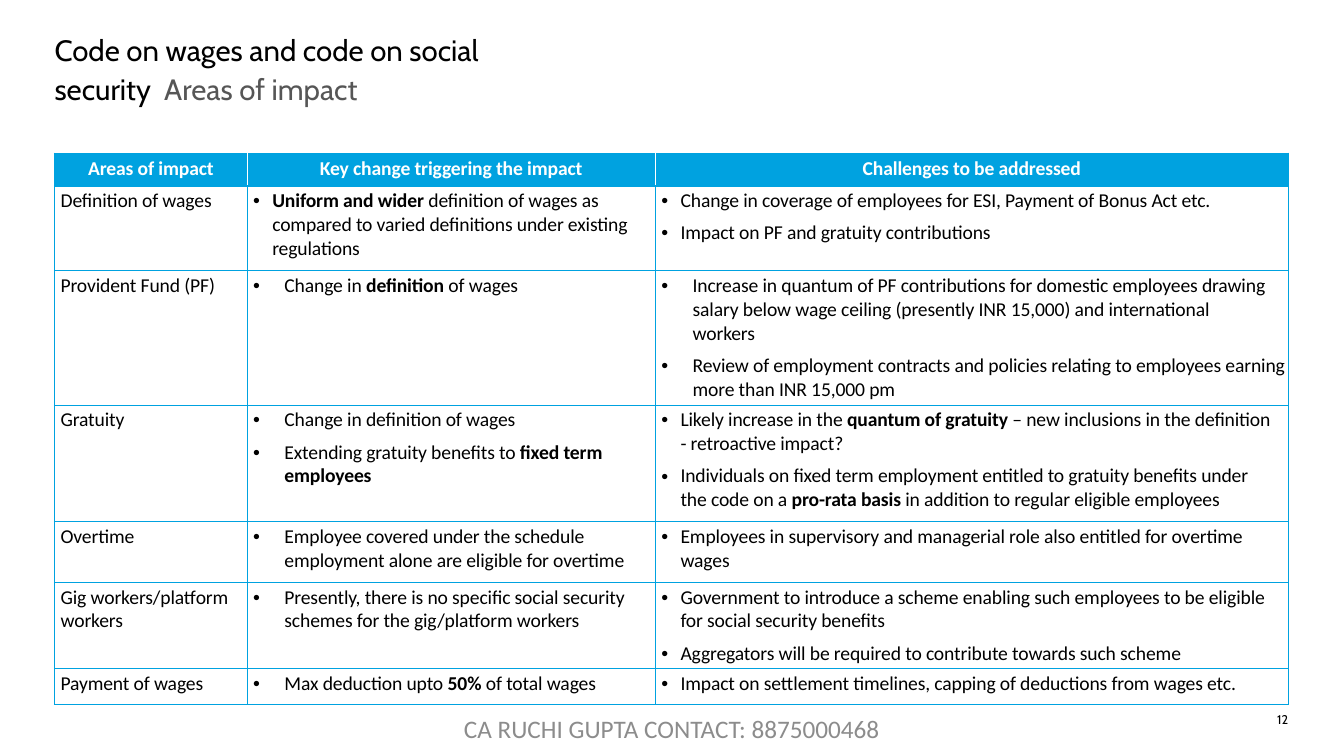
from pptx import Presentation
from pptx.dml.color import RGBColor
from pptx.enum.text import PP_ALIGN
from pptx.oxml.ns import qn
from pptx.util import Inches, Pt
from lxml import etree

LEFT, MID = PP_ALIGN.LEFT, PP_ALIGN.CENTER
COLS, ROWS = 160, 90          # grid of the slide
NEAR, FAR = (0.25, 0.19), (0.37, 0.31)   # bullet text and hang, inches
PLAIN = (0.06, 0)

HEADS = ["Areas of impact", "Key change triggering the impact",
         "Challenges to be addressed"]
WIDTHS = [22.92, 48.6, 75.36]
# Height, area, changes, challenges; *bold*, | breaks a line
AREAS = [
    (10.1, "Definition of wages",
     (NEAR, ["*Uniform and wider* definition of wages as compared to varied "
             "definitions under existing regulations"]),
     (NEAR, ["Change in coverage of employees for ESI, Payment of Bonus Act etc.",
             "Impact on PF and gratuity contributions"])),
    (16, "Provident Fund (PF)",
     (FAR, ["Change in *definition* of wages"]),
     (FAR, ["Increase in quantum of PF contributions for domestic employees "
            "drawing salary below wage ceiling (presently INR 15,000) and "
            "international|workers",
            "Review of employment contracts and policies relating to employees "
            "earning more than INR 15,000 pm"])),
    (13.9, "Gratuity",
     (FAR, ["Change in definition of wages",
            "Extending gratuity benefits to *fixed term employees*"]),
     (NEAR, ["Likely increase in the *quantum of gratuity* – new inclusions in "
             "the definition",
             "- retroactive impact?",
             "Individuals on fixed term employment entitled to gratuity "
             "benefits under|the code on a *pro-rata basis* in addition to "
             "regular eligible employees"])),
    (7.2, "Overtime",
     (FAR, ["Employee covered under the schedule employment alone are "
            "eligible for overtime"]),
     (NEAR, ["Employees in supervisory and managerial role also entitled for "
             "overtime wages"])),
    (10.3, "Gig workers/platform workers",
     (FAR, ["Presently, there is no specific social security schemes for the "
            "gig/platform workers"]),
     (NEAR, ["Government to introduce a scheme enabling such employees to be "
             "eligible for social security benefits",
             "Aggregators will be required to contribute towards such scheme"])),
    (4.2, "Payment of wages",
     (FAR, ["Max deduction upto *50%* of total wages"]),
     (NEAR, ["Impact on settlement timelines, capping of deductions from "
             "wages etc."])),
]


def tint(code):
    return RGBColor.from_string(code)


class Page:
    blue, white, black = "00A2E0", "FFFFFF", "000000"
    head, body = "Cabin", "Calibri"

    def __init__(self, deck):
        self.wide = deck.slide_width / COLS
        self.high = deck.slide_height / ROWS
        self.slide = deck.slides.add_slide(deck.slide_layouts[6])

    def area(self, x, y, w, h):
        return (round(x * self.wide), round(y * self.high),
                round(w * self.wide), round(h * self.high))

    def style(self, run, size, face, color, bold=False):
        font = run.font
        font.size, font.name, font.bold = Pt(size), face, bold
        font.color.rgb = tint(color)

    def label(self, place, parts, size, face, align=LEFT, pitch=None):
        """Text box of one paragraph, from (text, colour) parts."""
        frame = self.slide.shapes.add_textbox(*self.area(*place)).text_frame
        frame.word_wrap = True
        frame.margin_left = frame.margin_right = 0
        frame.margin_top = frame.margin_bottom = 0
        para = frame.paragraphs[0]
        para.alignment, para.line_spacing = align, pitch
        for text, color in parts:
            run = para.add_run()
            run.text = text
            self.style(run, size, face, color)

    def edge(self, cell, sides):
        """Cell borders, given as side and colour."""
        props = cell._tc.get_or_add_tcPr()
        for side, color in sides.items():
            line = etree.SubElement(props, qn("a:ln" + side), w=str(Pt(1)))
            fill = etree.SubElement(line, qn("a:solidFill"))
            etree.SubElement(fill, qn("a:srgbClr"), val=color)

    def words(self, para, text, color, bold=False):
        for row, line in enumerate(text.split("|")):
            if row:
                para.add_line_break()
            for i, part in enumerate(line.split("*")):
                if part:
                    run = para.add_run()
                    run.text = part
                    self.style(run, 14, self.body, color, bold or i % 2 == 1)
                    run._r.get_or_add_rPr().set("spc", "-10")

    def cell(self, cell, lines, indent):
        """Body cell; a hanging indent brings a bullet."""
        cell.margin_left = cell.margin_right = cell.margin_bottom = 0
        cell.margin_top = Inches(0.03)
        self.edge(cell, dict.fromkeys("LRTB", self.blue))
        cell.fill.background()
        left, hang = indent
        for i, text in enumerate(lines):
            para = cell.text_frame.paragraphs[0] if i == 0 \
                else cell.text_frame.add_paragraph()
            more = text.startswith("- ")
            para.space_before = Pt(0 if more else 6 if i else 1.9)
            props = para._p.get_or_add_pPr()
            props.set("marL", str(Inches(left)))
            if hang and not more:
                props.set("indent", str(-Inches(hang)))
                etree.SubElement(props, qn("a:buFont"), typeface="Arial")
                etree.SubElement(props, qn("a:buChar"), char="•")
            self.words(para, text, self.black)

    def title(self, cell, text, col, last):
        """Header cell, white lines between neighbours."""
        cell.margin_left = cell.margin_right = cell.margin_bottom = 0
        cell.margin_top = Inches(0.04)
        self.edge(cell, {"L": self.white if col else self.blue,
                         "R": self.blue if col == last else self.white,
                         "T": self.blue, "B": self.blue})
        cell.fill.solid()
        cell.fill.fore_color.rgb = tint(self.blue)
        para = cell.text_frame.paragraphs[0]
        para.alignment, para.space_before = MID, Pt(2.5)
        self.words(para, text, self.white, True)

    def table(self, x, y, heads, widths, top, areas):
        highs = [top] + [area[0] for area in areas]
        place = self.area(x, y, sum(widths), sum(highs))
        grid = self.slide.shapes.add_table(len(highs), len(heads), *place).table
        grid.first_row = grid.horz_banding = False
        for col, width in zip(grid.columns, widths):
            col.width = round(width * self.wide)
        for row, high in zip(grid.rows, highs):
            row.height = round(high * self.high)
        for col, text in enumerate(heads):
            self.title(grid.cell(0, col), text, col, len(heads) - 1)
        for row, (_, name, *lists) in enumerate(areas, 1):
            for col, (indent, lines) in enumerate([(PLAIN, [name]), *lists]):
                self.cell(grid.cell(row, col), lines, indent)


def main():
    deck = Presentation()
    deck.slide_width, deck.slide_height = Inches(13.33), Inches(7.5)
    page = Page(deck)
    # Page number
    page.label((151.44, 85.08, 2.52, 1.8), [("12", page.black)], 9, page.head,
               MID, Pt(8.7))
    # Title
    page.label((6.5, 3.5, 57.96, 9.12),
               [("Code on wages and code on social security ", page.black),
                (" Areas of impact", "565656")], 21, page.head, LEFT, 1.09)
    # Impact table
    page.table(6.5, 18.24, HEADS, WIDTHS, 3.9, AREAS)
    # Contact line
    page.label((54.36, 84.96, 51.24, 3.6),
               [("CA RUCHI GUPTA CONTACT: 8875000468", "8C8C8C")],
               18, page.body, MID)
    deck.save("out.pptx")


if __name__ == "__main__":
    main()
